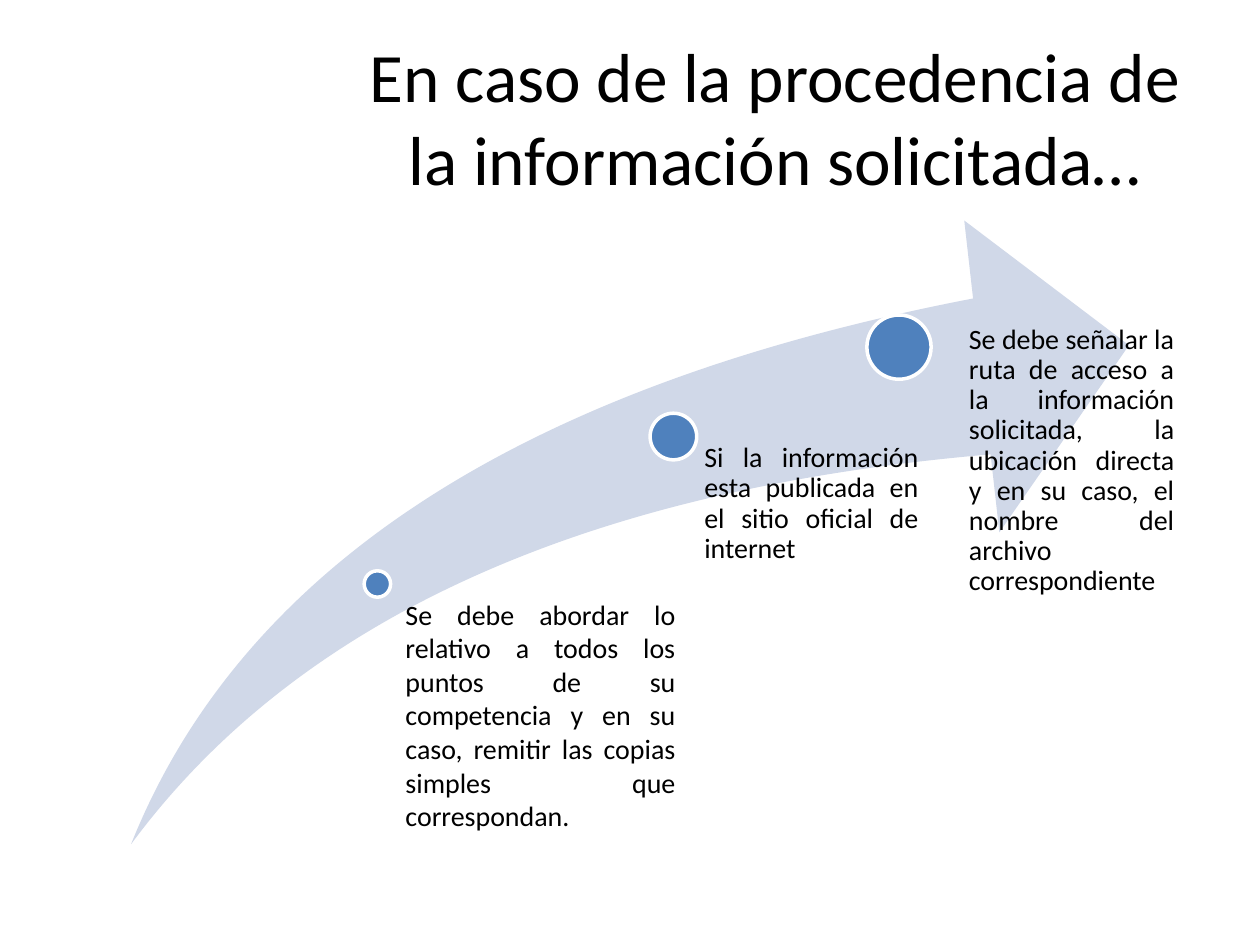
from dataclasses import dataclass

from pptx import Presentation
from pptx.dml.color import RGBColor
from pptx.enum.shapes import MSO_SHAPE
from pptx.enum.text import MSO_ANCHOR, PP_ALIGN
from pptx.util import Pt

PX = 9144


@dataclass(frozen=True)
class Theme:
    """Colours, font and type sizes of the slide."""
    font: str = "Calibri"
    ink: RGBColor = RGBColor(0, 0, 0)
    band: RGBColor = RGBColor(0xD0, 0xD8, 0xE8)
    dot: RGBColor = RGBColor(0x4F, 0x81, 0xBD)
    rim: RGBColor = RGBColor(0xFF, 0xFF, 0xFF)
    head: float = 39.6
    body: float = 16


THEME = Theme()
TITLE = "En caso de la procedencia de la información solicitada…"
DOTS = [(185, 278, 21), (412, 153, 37), (584, 75, 51)]
STEPS = [
    ("Si la información esta publicada en el sitio oficial de internet",
     (435, 177, 190, 269), 20),
    ("Se debe señalar la ruta de acceso a la información solicitada, la "
     "ubicación directa y en su caso, el nombre del archivo correspondiente",
     (638, 83, 190, 344), 27),
]
NOTE = ("Se debe abordar lo relativo a todos los puntos de su competencia "
        "y en su caso, remitir las copias simples que correspondan.")


def emu(*sizes):
    """Turn px lengths into EMU."""
    return [size * PX for size in sizes]


def add_text(shapes, box, text, size, align, pads=(10, 5, 10, 5)):
    """Place one wrapped paragraph in a box and return its frame."""
    frame = shapes.add_textbox(*emu(*box)).text_frame
    frame.word_wrap = True
    (frame.margin_left, frame.margin_top,
     frame.margin_right, frame.margin_bottom) = emu(*pads)
    frame.text = text
    para = frame.paragraphs[0]
    para.alignment = align
    font = para.runs[0].font
    font.name, font.size = THEME.font, Pt(size)
    font.color.rgb = THEME.ink
    return frame


def add_form(shapes, kind, box, fill):
    """Place a flat preset shape without an outline."""
    form = shapes.add_shape(kind, *emu(*box))
    form.shadow.inherit = False
    form.fill.solid()
    form.fill.fore_color.rgb = fill
    form.line.fill.background()
    return form


def add_title(slide, box):
    """Place the centred heading."""
    frame = add_text(slide.shapes, box, TITLE, THEME.head, PP_ALIGN.CENTER)
    frame.vertical_anchor = MSO_ANCHOR.MIDDLE


def add_path(slide, box):
    """Place the rising arrow with its dots and step texts."""
    left, top = box[:2]
    shapes = slide.shapes.add_group_shape().shapes
    arrow = add_form(shapes, MSO_SHAPE.SWOOSH_ARROW, box, THEME.band)
    arrow.adjustments[0] = arrow.adjustments[1] = 0.25
    for x, y, size in DOTS:
        dot = add_form(shapes, MSO_SHAPE.OVAL,
                       (left + x, top + y, size, size), THEME.dot)
        dot.line.color.rgb = THEME.rim
        dot.line.width = Pt(2)
    for text, (x, y, wide, high), pad in STEPS:
        frame = add_text(shapes, (left + x, top + y, wide, high), text,
                         THEME.body, PP_ALIGN.JUSTIFY, (pad, 0, 0, 0))
        para = frame.paragraphs[0]
        para.line_spacing = 0.9
        para.space_after = Pt(5.6)


def add_note(slide, box):
    """Place the text beside the first dot."""
    add_text(slide.shapes, box, NOTE, THEME.body, PP_ALIGN.JUSTIFY)


def main():
    """Build and save the slide."""
    deck = Presentation()
    deck.slide_width, deck.slide_height = emu(1000, 750)
    slide = deck.slides.add_slide(deck.slide_layouts[6])
    add_title(slide, (280, 30, 670, 125))
    add_path(slide, (104, 175, 792, 495))
    add_note(slide, (312, 469, 234, 199))
    deck.save("out.pptx")


if __name__ == "__main__":
    main()
